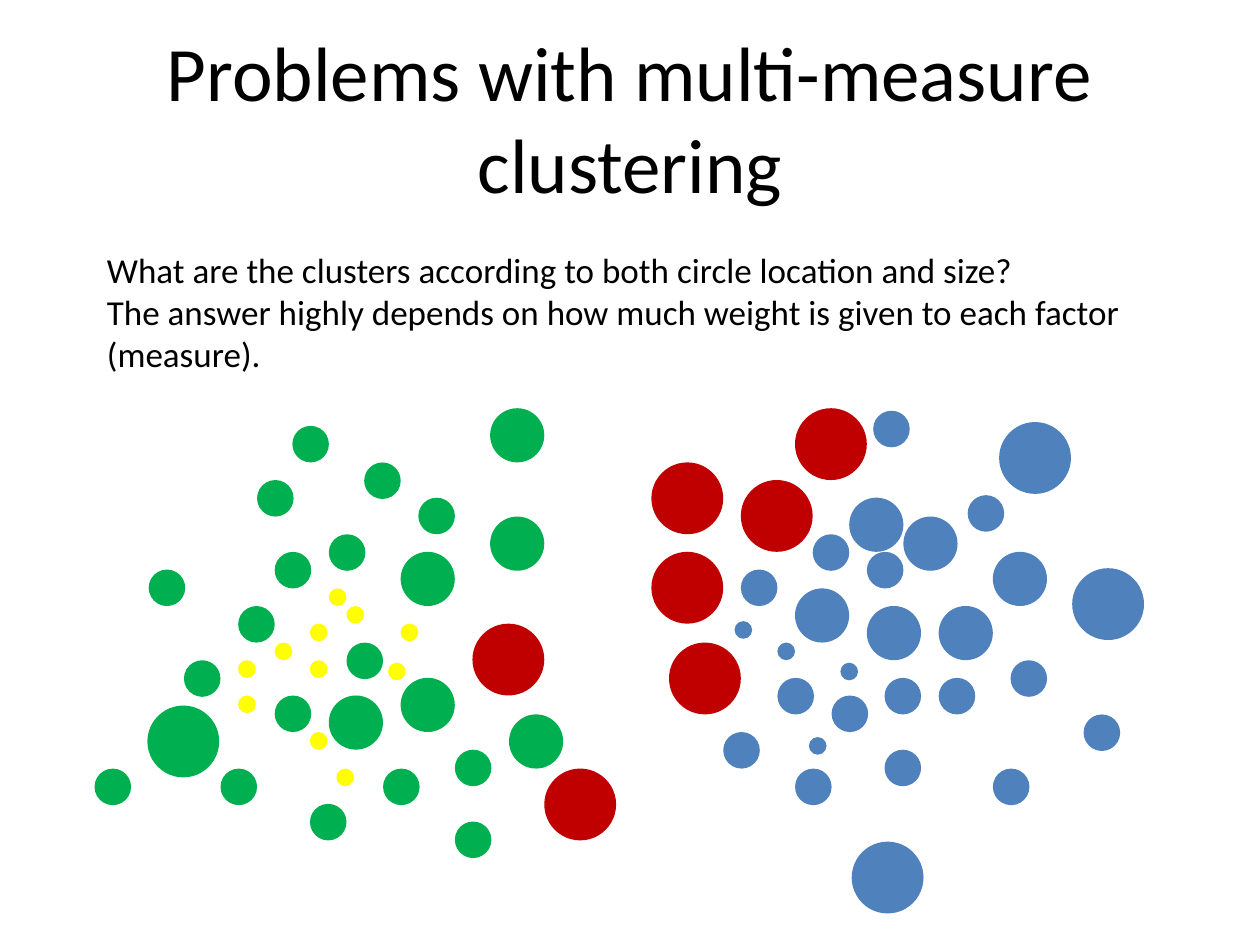
from pptx import Presentation
from pptx.dml.color import RGBColor
from pptx.enum.shapes import MSO_SHAPE
from pptx.enum.text import MSO_ANCHOR, PP_ALIGN
from pptx.util import Emu, Pt

OVAL = MSO_SHAPE.OVAL
LEFT, CENTER = PP_ALIGN.LEFT, PP_ALIGN.CENTER
TOP, MIDDLE = MSO_ANCHOR.TOP, MSO_ANCHOR.MIDDLE
BLANK_LAYOUT = 6
EMU_PER_PX = 9144  # 100 px to the inch

COLORS = {
    "text": "000000",
    "green": "00B050",
    "red": "C00000",
    "yellow": "FFFF00",
    "blue": "4F81BD",
}
DIAMETERS = {"tiny": 14, "small": 29, "medium": 43, "large": 57}

# Left and top of every circle, by cluster colour and circle size
CLUSTERS = {
    ("green", "small"): [
        (261, 424), (289, 367), (118, 452), (75, 610), (232, 338), (332, 395),
        (361, 595), (204, 381), (275, 510), (189, 481), (218, 438), (146, 524),
        (175, 610), (218, 552), (304, 610), (246, 638), (361, 652),
    ],
    ("green", "medium"): [
        (318, 438), (318, 538), (389, 410), (261, 552), (404, 567), (389, 324),
    ],
    ("green", "large"): [(117, 560)],
    ("red", "large"): [
        (531, 510), (517, 438), (375, 495), (517, 367), (432, 610), (588, 381),
        (631, 324),
    ],
    ("yellow", "tiny"): [
        (275, 481), (246, 524), (189, 524), (318, 495), (246, 581), (189, 552),
        (261, 467), (246, 495), (218, 510), (267, 610), (308, 526),
    ],
    ("blue", "large"): [(851, 451), (793, 335), (676, 668)],
    ("blue", "medium"): [
        (631, 467), (674, 395), (688, 481), (717, 410), (788, 438), (745, 481),
    ],
    ("blue", "small"): [
        (693, 326), (768, 393), (860, 567), (802, 524), (788, 610), (588, 452),
        (645, 424), (617, 538), (574, 581), (702, 538), (688, 438), (660, 552),
        (631, 610), (745, 538), (702, 595),
    ],
    ("blue", "tiny"): [(617, 510), (583, 493), (667, 526), (642, 585)],
}

TITLE = "Problems with multi-measure clustering"
QUESTION = [
    "What are the clusters according to both circle location and size?",
    "The answer highly depends on how much weight is given to each factor (measure).",
]


def px(*lengths):
    return [Emu(length * EMU_PER_PX) for length in lengths]


class SlideBuilder:
    font = "Calibri"

    def __init__(self, slide):
        self.slide = slide

    def text(self, box, paragraphs, size, align=LEFT, anchor=TOP):
        frame = self.slide.shapes.add_textbox(*px(*box)).text_frame
        frame.word_wrap = True
        frame.vertical_anchor = anchor
        for index, words in enumerate(paragraphs):
            paragraph = frame.add_paragraph() if index else frame.paragraphs[0]
            paragraph.alignment = align
            run = paragraph.add_run()
            run.text = words
            run.font.name = self.font
            run.font.size = Pt(size)
            run.font.color.rgb = RGBColor.from_string(COLORS["text"])

    def circle(self, left, top, diameter, color):
        circle = self.slide.shapes.add_shape(OVAL, *px(left, top, diameter, diameter))
        circle.shadow.inherit = False
        circle.fill.solid()
        circle.fill.fore_color.rgb = RGBColor.from_string(COLORS[color])
        circle.line.fill.background()


def main():
    deck = Presentation()
    deck.slide_width, deck.slide_height = px(1000, 750)
    builder = SlideBuilder(deck.slides.add_slide(deck.slide_layouts[BLANK_LAYOUT]))

    builder.text((50, 30, 900, 125), [TITLE], 44, CENTER, MIDDLE)
    for (color, size), positions in CLUSTERS.items():
        for left, top in positions:
            builder.circle(left, top, DIAMETERS[size], color)
    builder.text((75, 192, 825, 111), QUESTION, 20)

    deck.save("out.pptx")


if __name__ == "__main__":
    main()
